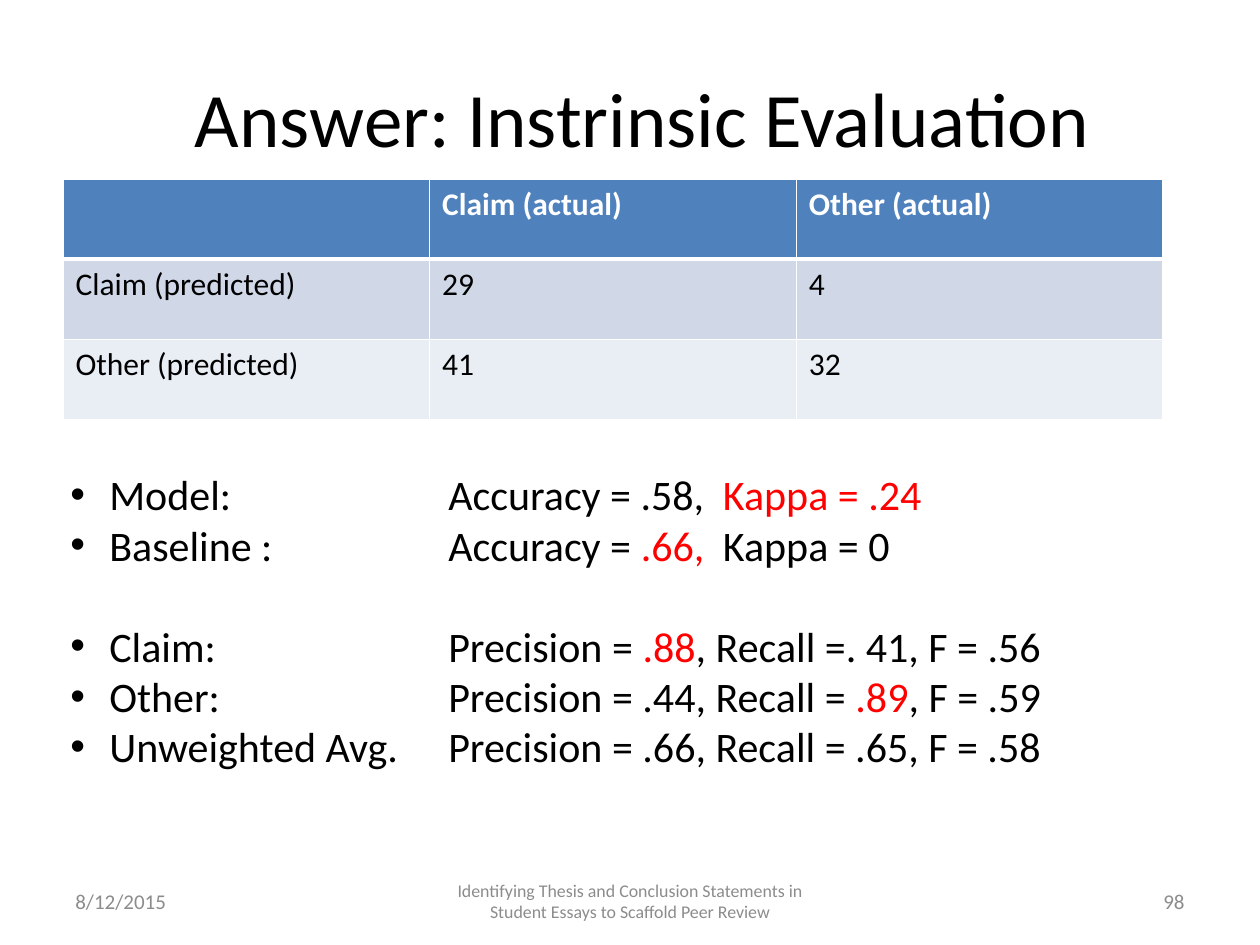
from lxml.etree import SubElement
from pptx import Presentation
from pptx.dml.color import RGBColor as Color
from pptx.enum.text import MSO_ANCHOR as Anchor, PP_ALIGN as Align
from pptx.oxml.ns import qn
from pptx.util import Emu, Inches, Pt

COLORS = {"black": "000000", "white": "FFFFFF", "red": "FF0000", "gray": "8C8C8C",
          "header": "4F81BD", "band": "D0D8E8", "light": "E9EDF4"}

deck = Presentation()
deck.slide_width, deck.slide_height = Inches(10), Inches(7.5)
page = deck.slides.add_slide(deck.slide_layouts[5])
margin = deck.slide_width * 0.05


def add_span(para, text, size, color="black", bold=False):
    span = para.add_run()
    span.text = text
    span.font.name = "Calibri"
    span.font.size = Pt(size)
    span.font.bold = bold
    span.font.color.rgb = Color.from_string(COLORS[color])


def add_box(left, top, width, height, anchor):
    box = page.shapes.add_textbox(Emu(int(left)), Inches(top), Inches(width), Inches(height))
    box.text_frame.word_wrap = True
    box.text_frame.vertical_anchor = anchor
    return box.text_frame


# Title
title = page.shapes.title
title.left, title.top = Emu(int(margin)), Inches(0.3)
title.width, title.height = Inches(9.2), Inches(1.25)
title.text_frame.vertical_anchor = Anchor.MIDDLE
para = title.text_frame.paragraphs[0]
para.alignment = Align.CENTER
add_span(para, "Answer: Instrinsic Evaluation", 44)

# Footer: date, talk title and page number, spread between the margins
footers = [("8/12/2015", 2.33, 12, Align.LEFT),
           ("Identifying Thesis and Conclusion Statements in Student Essays to Scaffold Peer Review",
            3.17, 10.2, Align.CENTER),
           ("98", 2.33, 12, Align.RIGHT)]
for share, (text, width, size, align) in zip((0, 0.5, 1), footers):
    left = margin + share * (deck.slide_width - 2 * margin - Inches(width))
    para = add_box(left, 6.95, width, 0.4, Anchor.MIDDLE).paragraphs[0]
    para.alignment = align
    add_span(para, text, size, "gray")

# Confusion matrix
matrix = [["", "Claim (actual)", "Other (actual)"],
          ["Claim (predicted)", "29", "4"],
          ["Other (predicted)", "41", "32"]]
table = page.shapes.add_table(3, 3, Emu(int(margin)), Inches(1.42),
                              Inches(8.73), Inches(1.91)).table
for column in table.columns:
    column.width = Inches(2.91)
for r, (row, fill) in enumerate(zip(matrix, ("header", "band", "light"))):
    is_header = r == 0
    for c, text in enumerate(row):
        cell = table.cell(r, c)
        properties = cell._tc.get_or_add_tcPr()
        for side in ("lnL", "lnR", "lnT", "lnB"):
            header_edge = (r, side) in ((0, "lnB"), (1, "lnT"))
            line = SubElement(properties, qn(f"a:{side}"), w=str(Pt(3 if header_edge else 1)))
            solid = SubElement(line, qn("a:solidFill"))
            SubElement(solid, qn("a:srgbClr"), val=COLORS["white"])
        cell.fill.solid()
        cell.fill.fore_color.rgb = Color.from_string(COLORS[fill])
        if text:
            add_span(cell.text_frame.paragraphs[0], text, 18,
                     "white" if is_header else "black", is_header)

# Scores: label, then tab-aligned values; the second group starts one line lower
scores = [
    [("Model:\tAccuracy = .58,\t", "black"), ("Kappa = .24", "red")],
    [("Baseline :\tAccuracy = ", "black"), (".66,\t", "red"), ("Kappa = 0", "black")],
    [("Claim:\tPrecision = ", "black"), (".88", "red"), (", Recall =. 41, F = .56", "black")],
    [("Other:\tPrecision = .44, Recall = ", "black"), (".89", "red"), (", F = .59", "black")],
    [("Unweighted Avg.\tPrecision = .66, Recall = .65, F = .58", "black")],
]
group_start = 2
indent = Inches(0.31)
frame = add_box(Inches(0.46), 3.67, 8.77, 2.52, Anchor.TOP)
for i, spans in enumerate(scores):
    para = frame.paragraphs[0] if i == 0 else frame.add_paragraph()
    if i == group_start:
        para.space_before = Pt(29)
    properties = para._p.get_or_add_pPr()
    properties.set("marL", str(indent))
    properties.set("indent", str(-indent))
    SubElement(properties, qn("a:buFont"), typeface="Arial")
    SubElement(properties, qn("a:buChar"), char="•")
    stops = SubElement(properties, qn("a:tabLst"))
    for stop in (3, 5.18):
        SubElement(stops, qn("a:tab"), pos=str(Inches(stop)), algn="l")
    for text, color in spans:
        add_span(para, text, 24, color)

deck.save("out.pptx")
